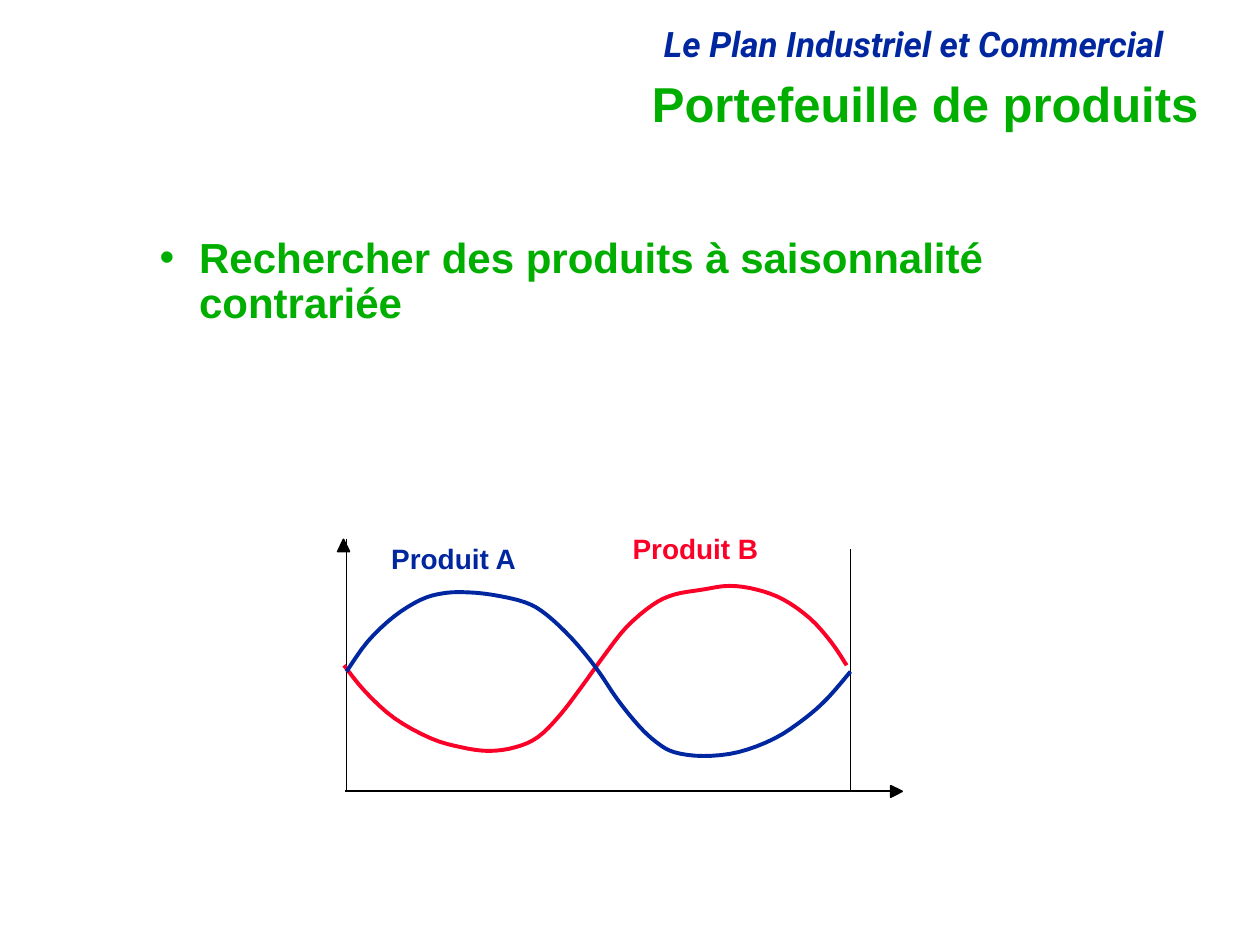
from lxml import etree
from pptx import Presentation
from pptx.dml.color import RGBColor
from pptx.enum.shapes import MSO_CONNECTOR
from pptx.enum.text import MSO_ANCHOR, PP_ALIGN
from pptx.oxml.ns import qn
from pptx.util import Pt

BLUE = RGBColor(0x00, 0x27, 0x9F)
GREEN = RGBColor(0x00, 0xAE, 0x00)
RED = RGBColor(0xFC, 0x01, 0x28)
BLACK = RGBColor(0x00, 0x00, 0x00)

STRAIGHT = MSO_CONNECTOR.STRAIGHT
LEFT, CENTER, RIGHT = PP_ALIGN.LEFT, PP_ALIGN.CENTER, PP_ALIGN.RIGHT
TOP, MIDDLE = MSO_ANCHOR.TOP, MSO_ANCHOR.MIDDLE

# Turning points of the two seasonal curves, in points
PRODUCT_A = [
    (198, 383.8), (210.2, 366.5), (225.4, 352.1), (240.5, 342.7), (252.7, 339.1),
    (265, 338.4), (280.8, 339.8), (300.2, 344.2), (312.5, 351.4), (326.9, 365),
    (340.6, 381.6), (352.8, 399.6), (365, 414.7), (375.1, 424.1), (385.2, 429.8),
    (401.8, 432), (421.9, 429.8), (442.8, 421.9), (460.1, 410.4), (473, 398.9),
    (486, 383.8),
]
PRODUCT_B = [
    (196.6, 380.2), (208.8, 395.3), (225.4, 410.4), (246.2, 421.9), (263.5, 427),
    (279.4, 429.1), (294.5, 427), (307.4, 421.2), (319.7, 409), (331.9, 393.1),
    (344.9, 375.1), (357.8, 358.6), (373, 345.6), (385.2, 339.8), (401, 337),
    (416.9, 334.8), (432.7, 337), (447.8, 342.7), (463, 353.5), (475.2, 367.2),
    (483.8, 380.2),
]


def smooth(knots, steps=4):
    """Return a Catmull-Rom curve through the knots."""
    padded = [knots[0], *knots, knots[-1]]
    points = [knots[0]]
    for a, b, c, d in zip(padded, padded[1:], padded[2:], padded[3:]):
        for step in range(1, steps + 1):
            t = step / steps
            points.append(tuple(
                0.5 * (2 * q + (r - p) * t + (2 * p - 5 * q + 4 * r - s) * t ** 2
                       + (3 * q - p - 3 * r + s) * t ** 3)
                for p, q, r, s in zip(a, b, c, d)))
    return points


class SlideBuilder:
    font = "Arial"
    axis_width = 1
    curve_width = 2.25

    def __init__(self, page):
        self.page = page

    def text(self, content, left, top, width, height, size, color, align=LEFT,
             anchor=TOP, font=None, italic=False, wrap=True):
        box = self.page.shapes.add_textbox(Pt(left), Pt(top), Pt(width), Pt(height))
        frame = box.text_frame
        frame.word_wrap = wrap
        frame.vertical_anchor = anchor
        para = frame.paragraphs[0]
        para.alignment = align
        para.line_spacing = 0.9
        span = para.add_run()
        span.text = content
        span.font.name = font or self.font
        span.font.size = Pt(size)
        span.font.bold = True
        span.font.italic = italic
        span.font.color.rgb = color
        return para

    def bullet(self, para, indent):
        props = para._p.get_or_add_pPr()
        props.set("marL", str(Pt(indent)))
        props.set("indent", str(-Pt(indent)))
        etree.SubElement(props, qn("a:buFont")).set("typeface", self.font)
        etree.SubElement(props, qn("a:buChar")).set("char", "•")

    def line(self, x1, y1, x2, y2):
        connector = self.page.shapes.add_connector(
            STRAIGHT, Pt(x1), Pt(y1), Pt(x2), Pt(y2))
        connector.line.color.rgb = BLACK
        connector.line.width = Pt(self.axis_width)
        etree.SubElement(connector._element.spPr, qn("a:effectLst"))

    def outline(self, points, color, width, filled=False):
        start, *rest = [(Pt(x), Pt(y)) for x, y in points]
        builder = self.page.shapes.build_freeform(*start)
        builder.add_line_segments(rest, close=filled)
        shape = builder.convert_to_shape()
        shape.shadow.inherit = False
        shape.line.color.rgb = color
        shape.line.width = Pt(width)
        if filled:
            shape.fill.solid()
            shape.fill.fore_color.rgb = color
        else:
            shape.fill.background()

    def arrowhead(self, *corners):
        self.outline(corners, BLACK, self.axis_width, filled=True)

    def curve(self, knots, color):
        self.outline(smooth(knots), color, self.curve_width)


def main():
    deck = Presentation()
    deck.slide_width, deck.slide_height = Pt(720), Pt(540)
    slide = SlideBuilder(deck.slides.add_slide(deck.slide_layouts[6]))

    # Headings
    slide.text("Le Plan Industriel et Commercial", 90, 12.2, 582, 28.8, 20, BLUE,
               RIGHT, font="Roboto", italic=True)
    slide.text("Portefeuille de produits", 121.7, 43.2, 570.2, 36, 28, GREEN,
               RIGHT, MIDDLE)

    # Main point
    point = slide.text("Rechercher des produits à saisonnalité contrariée",
                       84.2, 131.8, 563.8, 84.2, 24, GREEN)
    slide.bullet(point, 22.5)

    # Axes and end of the season
    slide.line(198, 452.2, 198, 308.2)
    slide.arrowhead((193, 315.2), (196.3, 308.2), (199.7, 315.2))
    slide.line(197.3, 452.2, 514.8, 452.2)
    slide.arrowhead((509, 449), (515.5, 452.2), (509, 455.5))
    slide.line(486, 452.2, 486, 314)

    # Opposed seasonal sales
    slide.curve(PRODUCT_B, RED)
    slide.curve(PRODUCT_A, BLUE)
    slide.text("Produit A", 216, 308.2, 86.4, 24.5, 16, BLUE, CENTER, wrap=False)
    slide.text("Produit B", 354.2, 302.4, 86.4, 24.5, 16, RED, CENTER, wrap=False)

    deck.save("out.pptx")


if __name__ == "__main__":
    main()
